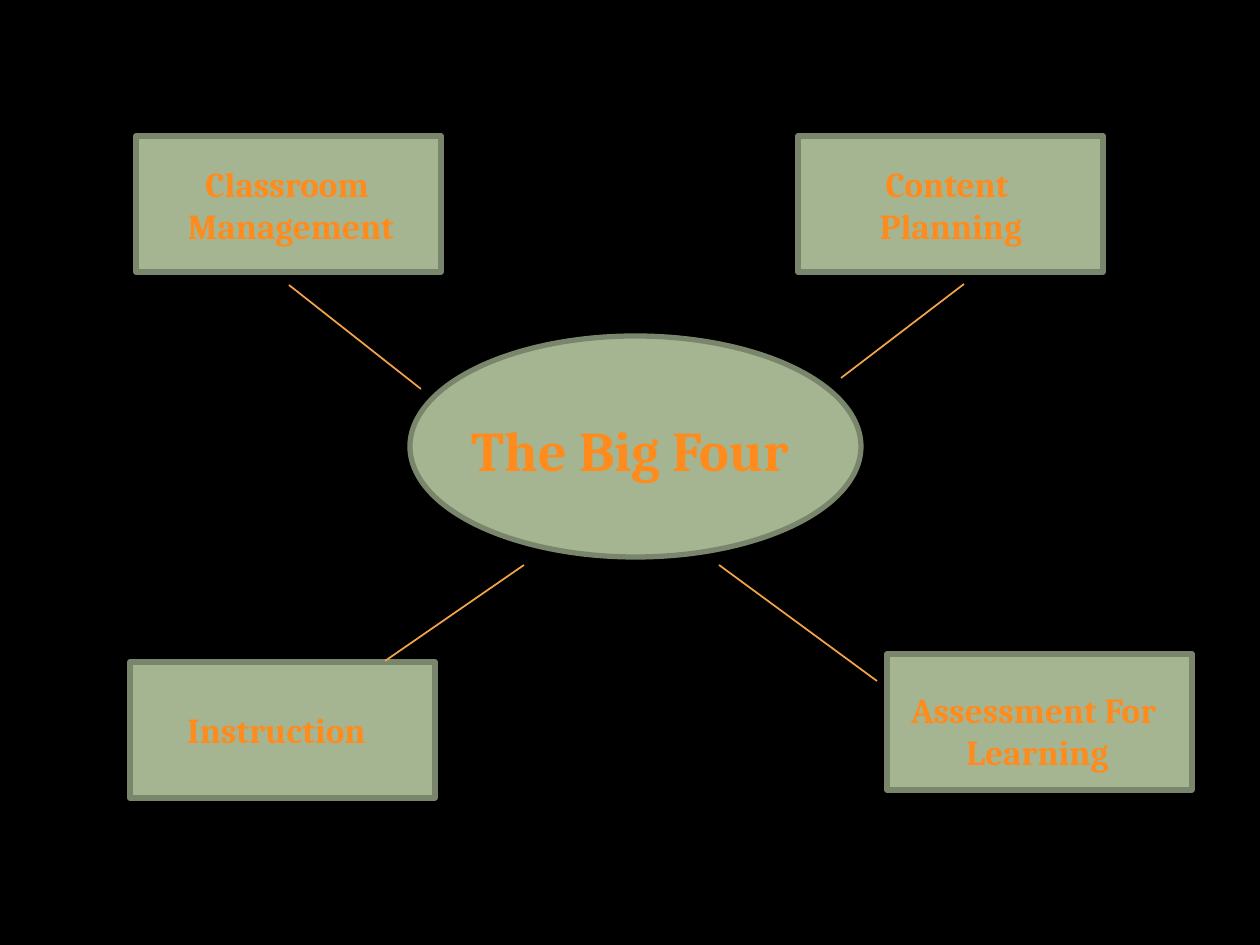
"""Builds a slide that links the Big Four teaching skills to a central hub."""
import copy
from dataclasses import dataclass

import pptx
import pptx.dml.color
import pptx.enum.shapes
import pptx.enum.text
import pptx.oxml
import pptx.oxml.ns
import pptx.util


@dataclass(frozen=True)
class Theme:
    background: str = "000000"
    panel: str = "A5B592"
    border: str = "7A866C"
    link: str = "F3A447"
    lettering: tuple = ((0, "FFC497"), (0.75, "FF8B1D"), (1, "E87E00"))
    font: str = "Cambria"
    hub_size: int = 32
    skill_size: int = 20
    border_width: int = 3
    link_width: int = 1


THEME = Theme()
EMU_PER_PX = 914400 / 126
SLIDE_SIZE = (1260, 945)
SKILL_SIZE = (305, 136)

HUB = {"lines": ["The Big Four"], "panel": (410, 336, 451, 221), "label": (449, 409, 363, 81)}
SKILLS = [
    {"lines": ["Classroom ", "Management"], "corner": (136, 136), "label": (169, 156, 244, 97)},
    {"lines": ["Content ", "Planning"], "corner": (798, 136), "label": (862, 156, 178, 97)},
    {"lines": ["Instruction"], "corner": (130, 662), "label": (169, 702, 215, 55)},
    {"lines": ["Assessment For ", "Learning"], "corner": (887, 654), "label": (892, 682, 291, 97)},
]
LINKS = [
    (289, 285, 421, 389),
    (719, 565, 877, 681),
    (964, 284, 841, 378),
    (524, 565, 385, 661),
]


def px(*lengths):
    return [pptx.util.Emu(round(length * EMU_PER_PX)) for length in lengths]


def rgb(value):
    return pptx.dml.color.RGBColor.from_string(value)


def add_panel(slide, kind, bounds):
    panel = slide.shapes.add_shape(kind, *px(*bounds))
    panel.shadow.inherit = False
    panel.fill.solid()
    panel.fill.fore_color.rgb = rgb(THEME.panel)
    panel.line.color.rgb = rgb(THEME.border)
    panel.line.width = pptx.util.Pt(THEME.border_width)


def paint_lettering(run):
    fill = run.font.fill
    fill.gradient()
    fill.gradient_angle = 270
    stop_list = run._r.find(".//" + pptx.oxml.ns.qn("a:gsLst"))
    stop_list.append(copy.deepcopy(stop_list[-1]))
    for stop, (position, color) in zip(fill.gradient_stops, THEME.lettering):
        stop.position = position
        stop.color.rgb = rgb(color)


def add_label(slide, lines, bounds, size):
    frame = slide.shapes.add_textbox(*px(*bounds)).text_frame
    frame.word_wrap = False
    frame.auto_size = pptx.enum.text.MSO_AUTO_SIZE.SHAPE_TO_FIT_TEXT
    for index, line in enumerate(lines):
        paragraph = frame.add_paragraph() if index else frame.paragraphs[0]
        paragraph.alignment = pptx.enum.text.PP_ALIGN.CENTER
        run = paragraph.add_run()
        run.text = line
        run.font.name = THEME.font
        run.font.size = pptx.util.Pt(size)
        run.font.bold = True
        paint_lettering(run)


def add_link(slide, ends):
    link = slide.shapes.add_connector(pptx.enum.shapes.MSO_CONNECTOR.STRAIGHT, *px(*ends))
    link.line.color.rgb = rgb(THEME.link)
    link.line.width = pptx.util.Pt(THEME.link_width)
    link._element.spPr.append(pptx.oxml.parse_xml(
        f"<a:effectLst {pptx.oxml.ns.nsdecls('a')}/>"))


def main():
    deck = pptx.Presentation()
    deck.slide_width, deck.slide_height = px(*SLIDE_SIZE)
    slide = deck.slides.add_slide(deck.slide_layouts[6])
    slide.background.fill.solid()
    slide.background.fill.fore_color.rgb = rgb(THEME.background)

    shapes = pptx.enum.shapes.MSO_SHAPE
    add_panel(slide, shapes.OVAL, HUB["panel"])
    for skill in SKILLS:
        add_panel(slide, shapes.RECTANGLE, skill["corner"] + SKILL_SIZE)
    add_label(slide, HUB["lines"], HUB["label"], THEME.hub_size)
    for skill in SKILLS:
        add_label(slide, skill["lines"], skill["label"], THEME.skill_size)
    for ends in LINKS:
        add_link(slide, ends)
    deck.save("out.pptx")


if __name__ == "__main__":
    main()
